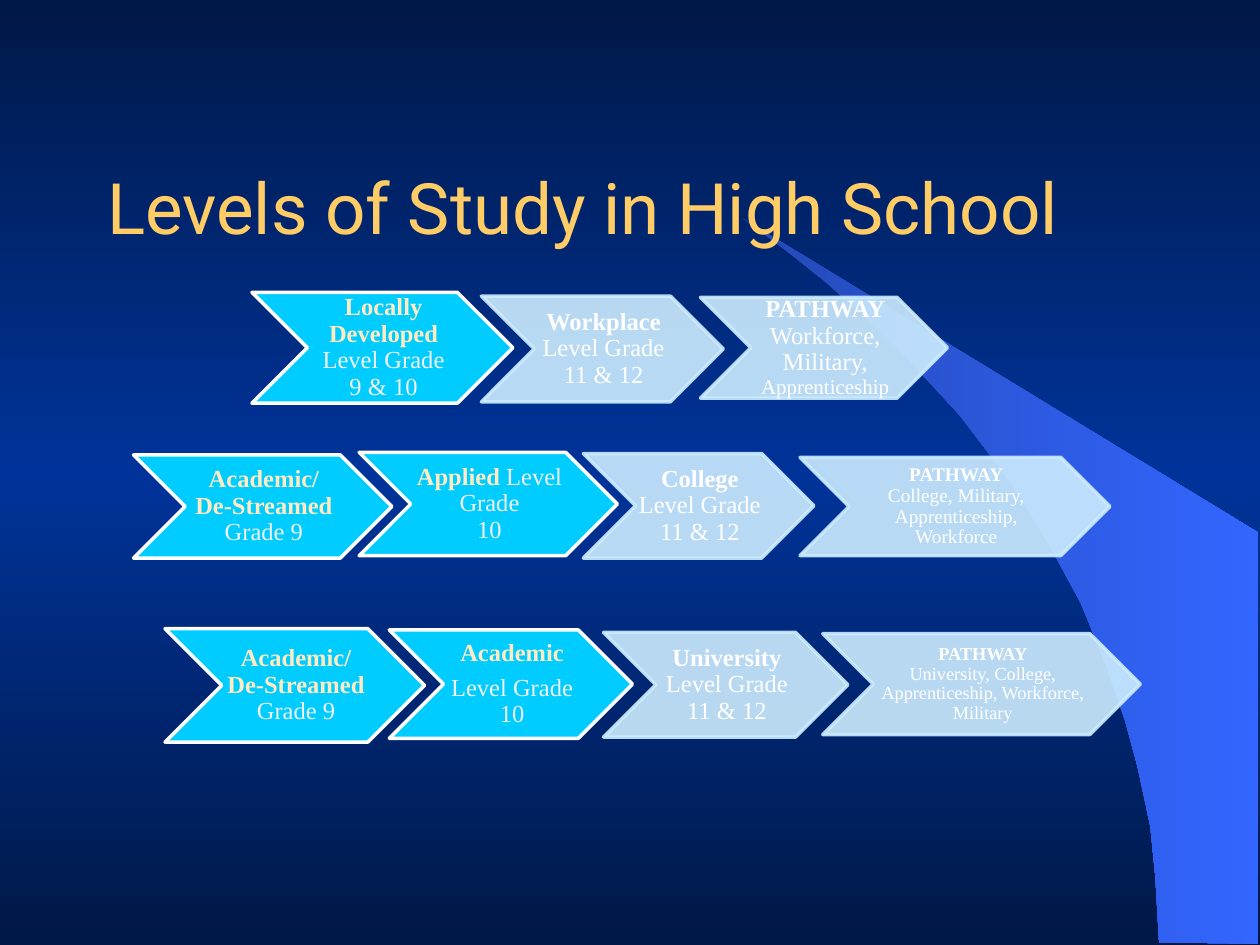
from copy import deepcopy
from dataclasses import dataclass

from lxml.etree import SubElement
from pptx import Presentation
from pptx.dml.color import RGBColor
from pptx.enum.shapes import MSO_SHAPE
from pptx.enum.text import MSO_ANCHOR, PP_ALIGN
from pptx.oxml.ns import qn
from pptx.util import Inches, Pt

SERIF = "Times New Roman"
SWOOSH_OUTLINE = [
    (9.2, 7.48), (9.99, 7.49), (9.99, 4.23), (5.89, 1.73), (6.24, 1.99),
    (6.53, 2.22), (6.85, 2.5), (7.16, 2.8), (7.62, 3.3), (8.03, 3.84),
    (8.32, 4.31), (8.58, 4.79), (8.78, 5.28), (8.93, 5.72), (9.03, 6.09),
    (9.13, 6.56), (9.17, 6.96),
]
CHEVRON_FRAME = {
    "word_wrap": True, "vertical_anchor": MSO_ANCHOR.MIDDLE,
    "margin_left": Inches(0.02), "margin_right": 0,
    "margin_top": Inches(0.01), "margin_bottom": Inches(0.01),
}
CHEVRON_PARAGRAPH = {"alignment": PP_ALIGN.CENTER, "line_spacing": 0.9}


@dataclass(frozen=True)
class Look:
    fill: str
    line: str
    heading: str
    detail: str
    opacity: int = 100


@dataclass(frozen=True)
class Words:
    text: str
    bold: bool = False
    size: float | None = None


@dataclass(frozen=True)
class Step:
    box: tuple[float, float, float, float]
    look: Look
    paragraphs: list[list[Words]]
    size: float = 14
    gap: float = 0


EARLY = Look("00CCFF", "FFFFFF", "FFEBC2", "F2F2F2")
LATER = Look("CCECFF", "CCECFF", "FFFFFF", "FFFFFF", 90)


def rgb(color: str) -> RGBColor:
    return RGBColor.from_string(color)


def apply(target, values: dict) -> None:
    for attribute, value in values.items():
        setattr(target, attribute, value)


def paint_gradient(fill, element, colors: list[str], angle: float) -> None:
    """Spread the colours evenly along a linear gradient."""
    fill.gradient()
    fill.gradient_angle = angle
    stop_list = next(element.iter(qn("a:gsLst")))
    for _ in colors[2:]:
        stop_list.insert(1, deepcopy(stop_list[0]))
    for index, (stop, color) in enumerate(zip(fill.gradient_stops, colors)):
        stop.color.rgb = rgb(color)
        stop.position = index / (len(colors) - 1)


def draw_swoosh(slide) -> None:
    points = [(Inches(x), Inches(y)) for x, y in SWOOSH_OUTLINE]
    builder = slide.shapes.build_freeform(*points[0])
    builder.add_line_segments(points[1:], close=True)
    swoosh = builder.convert_to_shape()
    swoosh.shadow.inherit = False
    swoosh.line.fill.background()
    paint_gradient(swoosh.fill, swoosh._element, ["2449B6", "3366FF"], 0)
    # Send behind the title
    slide.shapes._spTree.insert(2, swoosh._element)


def draw_step(slide, step: Step) -> None:
    look = step.look
    chevron = slide.shapes.add_shape(MSO_SHAPE.CHEVRON, *map(Inches, step.box))
    chevron.shadow.inherit = False
    chevron.fill.solid()
    chevron.fill.fore_color.rgb = rgb(look.fill)
    chevron.line.color.rgb = rgb(look.line)
    chevron.line.width = Pt(2)
    if look.opacity < 100:
        for color in chevron._element.spPr.iter(qn("a:srgbClr")):
            SubElement(color, qn("a:alpha"), val=str(look.opacity * 1000))

    frame = chevron.text_frame
    apply(frame, CHEVRON_FRAME)
    for index, content in enumerate(step.paragraphs):
        paragraph = frame.add_paragraph() if index else frame.paragraphs[0]
        apply(paragraph, CHEVRON_PARAGRAPH | {"space_after": Pt(step.gap)})
        for words in content:
            run = paragraph.add_run()
            run.text = words.text
            apply(run.font, {"name": SERIF, "bold": words.bold,
                             "size": Pt(words.size or step.size)})
            run.font.color.rgb = rgb(look.heading if words.bold else look.detail)


def senior(level: str) -> list[list[Words]]:
    return [[Words(level, True), Words(" Level Grade 11 & 12")]]


def pathway(*destinations: Words) -> list[list[Words]]:
    return [[Words("PATHWAY", True)], list(destinations)]


DE_STREAMED = [[Words("Academic/", True)],
               [Words("De-Streamed", True), Words(" Grade 9")]]

ROUTES = [
    # Workplace route
    [
        Step((2, 2.32, 2.07, 0.88), EARLY,
             [[Words("Locally Developed ", True), Words("Level Grade")],
              [Words("9 & 10")]]),
        Step((3.82, 2.35, 1.92, 0.84), LATER, senior("Workplace")),
        Step((5.56, 2.36, 1.96, 0.8), LATER,
             pathway(Words("Workforce, Military, "),
                     Words("Apprenticeship", size=12))),
    ],
    # College route
    [
        Step((1.06, 3.61, 2.05, 0.82), EARLY, DE_STREAMED),
        Step((2.85, 3.59, 2.05, 0.82), EARLY,
             [[Words("Applied", True), Words(" Level Grade")], [Words("10")]]),
        Step((4.63, 3.6, 1.83, 0.83), LATER, senior("College")),
        Step((6.35, 3.63, 2.46, 0.78), LATER,
             pathway(Words("College, Military, Apprenticeship, Workforce")), 11),
    ],
    # University route
    [
        Step((1.31, 4.99, 2.06, 0.9), EARLY, DE_STREAMED),
        Step((3.09, 5, 1.93, 0.86), EARLY,
             [[Words("Academic", True)], [Words("Level Grade 10")]], gap=5),
        Step((4.79, 5.02, 1.94, 0.83), LATER, senior("University")),
        Step((6.53, 5.03, 2.52, 0.8), LATER,
             pathway(Words("University, College, Apprenticeship, "
                           "Workforce, Military")), 10.5),
    ],
]


def main() -> None:
    deck = Presentation()
    deck.slide_width, deck.slide_height = Inches(10), Inches(7.5)
    slide = deck.slides.add_slide(deck.slide_layouts[5])

    # Background
    paint_gradient(slide.background.fill, slide._element,
                   ["001847", "003399", "001847"], 90)
    draw_swoosh(slide)

    # Title
    title = slide.shapes.title
    apply(title, {"left": Inches(0.75), "top": Inches(1.14),
                  "width": Inches(8.5), "height": Inches(1)})
    title.text_frame.text = "Levels of Study in High School"
    title.text_frame.vertical_anchor = MSO_ANCHOR.MIDDLE
    heading = title.text_frame.paragraphs[0]
    heading.alignment = PP_ALIGN.LEFT
    apply(heading.runs[0].font, {"name": "Roboto", "size": Pt(40.5)})
    heading.runs[0].font.color.rgb = rgb("FFCC66")

    # Study routes
    for route in ROUTES:
        for step in route:
            draw_step(slide, step)

    deck.save("out.pptx")


if __name__ == "__main__":
    main()
